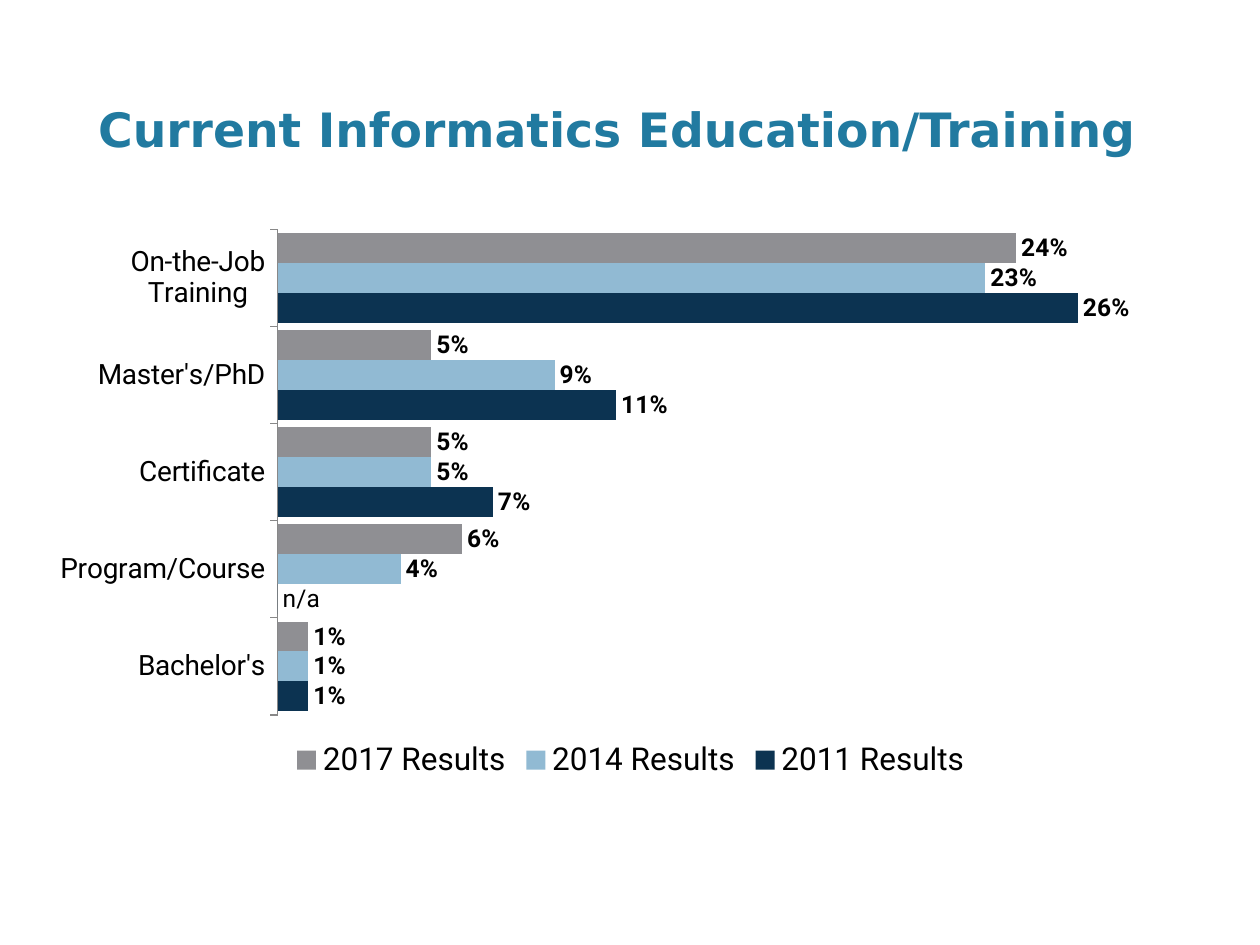
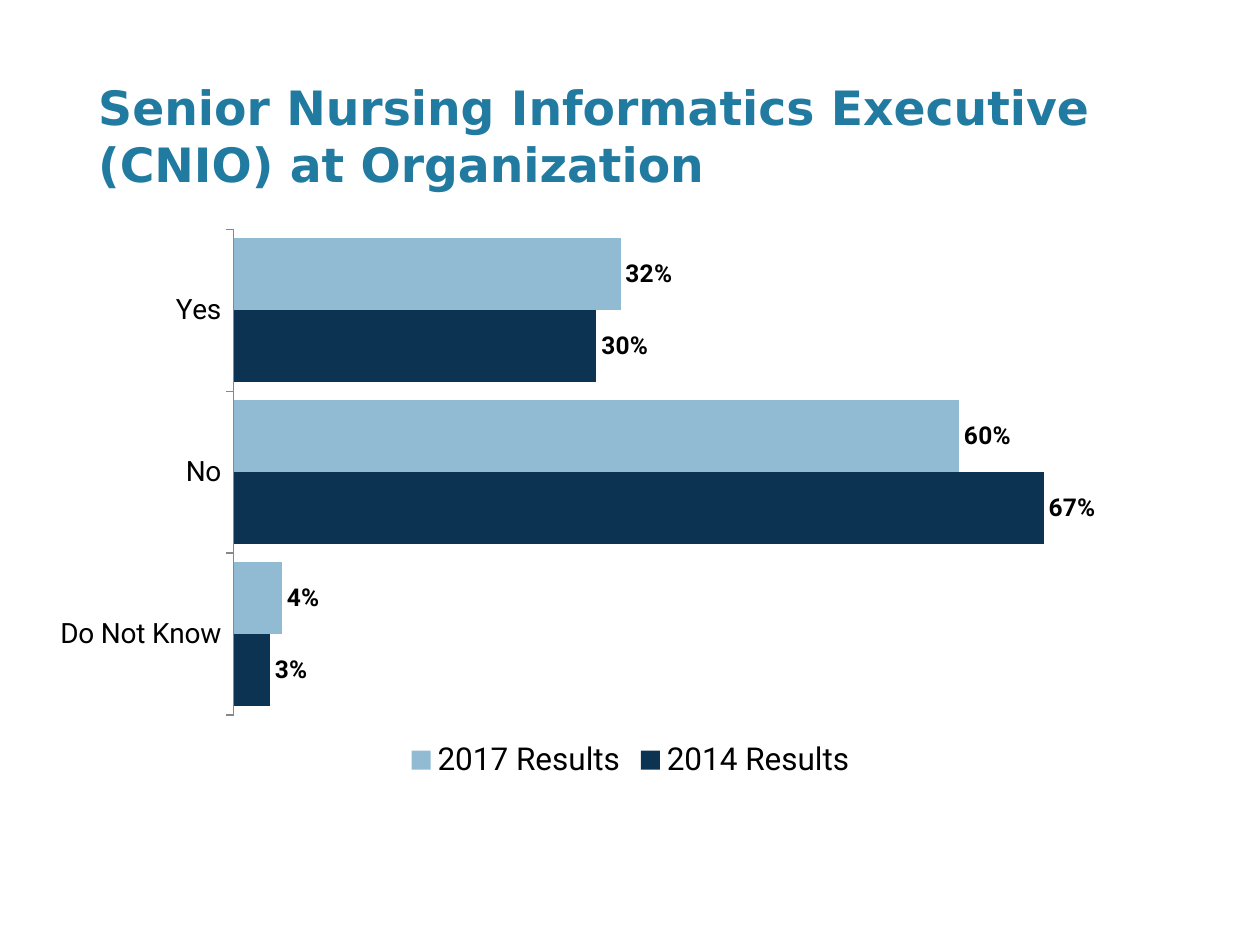
from pptx import Presentation
from pptx.chart.data import CategoryChartData
from pptx.dml.color import RGBColor
from pptx.enum.chart import XL_CHART_TYPE, XL_LABEL_POSITION, XL_LEGEND_POSITION, XL_TICK_MARK
from pptx.enum.text import MSO_ANCHOR
from pptx.util import Inches, Pt

COLS, ROWS = 100, 75
BLACK, TEAL, GREY = "000000", "217AA0", "888888"
NAVY, SKY, STONE = "0C3351", "91BAD3", "8F8F93"


def tint(code):
    """Turn a hex string into a colour."""
    return RGBColor.from_string(code)


def apply(item, **style):
    """Set each named attribute on an item."""
    for key, value in style.items():
        setattr(item, key, value)


class Deck:
    """Hold the shared style and the current slide."""

    def __init__(self):
        """Open an empty deck of 10 by 7.5 inches."""
        self.file = Presentation()
        apply(self.file, slide_width=Inches(10), slide_height=Inches(7.5))
        self.slide = None

    def add(self):
        """Start a new blank slide."""
        self.slide = self.file.slides.add_slide(self.file.slide_layouts[6])

    def grid(self, col, row, wide, high):
        """Turn columns and rows into lengths."""
        across = self.file.slide_width / COLS
        down = self.file.slide_height / ROWS
        return [round(n) for n in (col * across, row * down, wide * across, high * down)]

    def font(self, font, size, bold=False, name="Roboto", color=BLACK):
        """Style one font."""
        apply(font, size=Pt(size), bold=bold, name=name)
        font.color.rgb = tint(color)

    def title(self, text, row):
        """Write the slide title."""
        frame = self.slide.shapes.add_textbox(*self.grid(7.8, row, 90.7, 8.8)).text_frame
        apply(frame, word_wrap=True, vertical_anchor=MSO_ANCHOR.MIDDLE, margin_left=0)
        run = frame.paragraphs[0].add_run()
        run.text = text
        self.font(run.font, 27, True, "DejaVu Sans", TEAL)

    def bars(self, groups, series, top):
        """Draw a bar chart with labels and a legend."""
        data = CategoryChartData(number_format="0%")
        data.categories = groups
        for name, _, values in series:
            data.add_series(name, values)
        chart = self.slide.shapes.add_chart(
            XL_CHART_TYPE.BAR_CLUSTERED, *self.grid(2.9, 17.3, 94.3, 45), data).chart
        apply(chart, has_title=False, has_legend=True)
        self.font(chart.font, 18)
        apply(chart.legend, position=XL_LEGEND_POSITION.BOTTOM, include_in_layout=False)
        self.font(chart.legend.font, 18)
        self.axes(chart, top)
        plot = chart.plots[0]
        apply(plot, gap_width=25, overlap=0, vary_by_categories=False)
        for bar, (_, color, _) in zip(plot.series, series):
            self.paint(bar, color)
        return plot

    def axes(self, chart, top):
        """Style the group axis and hide the value axis."""
        apply(chart.value_axis, minimum_scale=0, maximum_scale=top,
              has_major_gridlines=False, visible=False)
        axis = chart.category_axis
        apply(axis, major_tick_mark=XL_TICK_MARK.OUTSIDE, has_major_gridlines=False)
        self.font(axis.tick_labels.font, 16)
        axis.format.line.width = Pt(0.75)
        axis.format.line.color.rgb = tint(GREY)

    def paint(self, bar, color):
        """Fill one series and label its values."""
        bar.format.fill.solid()
        bar.format.fill.fore_color.rgb = tint(color)
        bar.invert_if_negative = False
        apply(bar.data_labels, show_value=True, number_format="0%",
              number_format_is_linked=False, position=XL_LABEL_POSITION.OUTSIDE_END)
        self.font(bar.data_labels.font, 14, True)

    def note(self, point, text):
        """Replace the label of one point."""
        label = point.data_label
        run = label.text_frame.paragraphs[0].add_run()
        run.text = text
        self.font(run.font, 14)
        label.position = XL_LABEL_POSITION.OUTSIDE_END


def main():
    """Build both slides."""
    deck = Deck()

    deck.add()
    deck.title("Current Informatics Education/Training", 5.8)
    plot = deck.bars(
        ["Bachelor's", "Program/Course", "Certificate", "Master's/PhD", "On-the-Job Training"],
        [("2011 Results", NAVY, (0.01, 0, 0.07, 0.11, 0.26)),
         ("2014 Results", SKY, (0.01, 0.04, 0.05, 0.09, 0.23)),
         ("2017 Results", STONE, (0.01, 0.06, 0.05, 0.05, 0.24))], 0.3)
    deck.note(plot.series[0].points[1], "n/a")

    deck.add()
    deck.title("Senior Nursing Informatics Executive (CNIO) at Organization", 6.3)
    deck.bars(
        ["Do Not Know", "No", "Yes"],
        [("2014 Results", NAVY, (0.03, 0.67, 0.3)),
         ("2017 Results", SKY, (0.04, 0.6, 0.32))], 0.8)

    deck.file.save("out.pptx")


if __name__ == "__main__":
    main()
